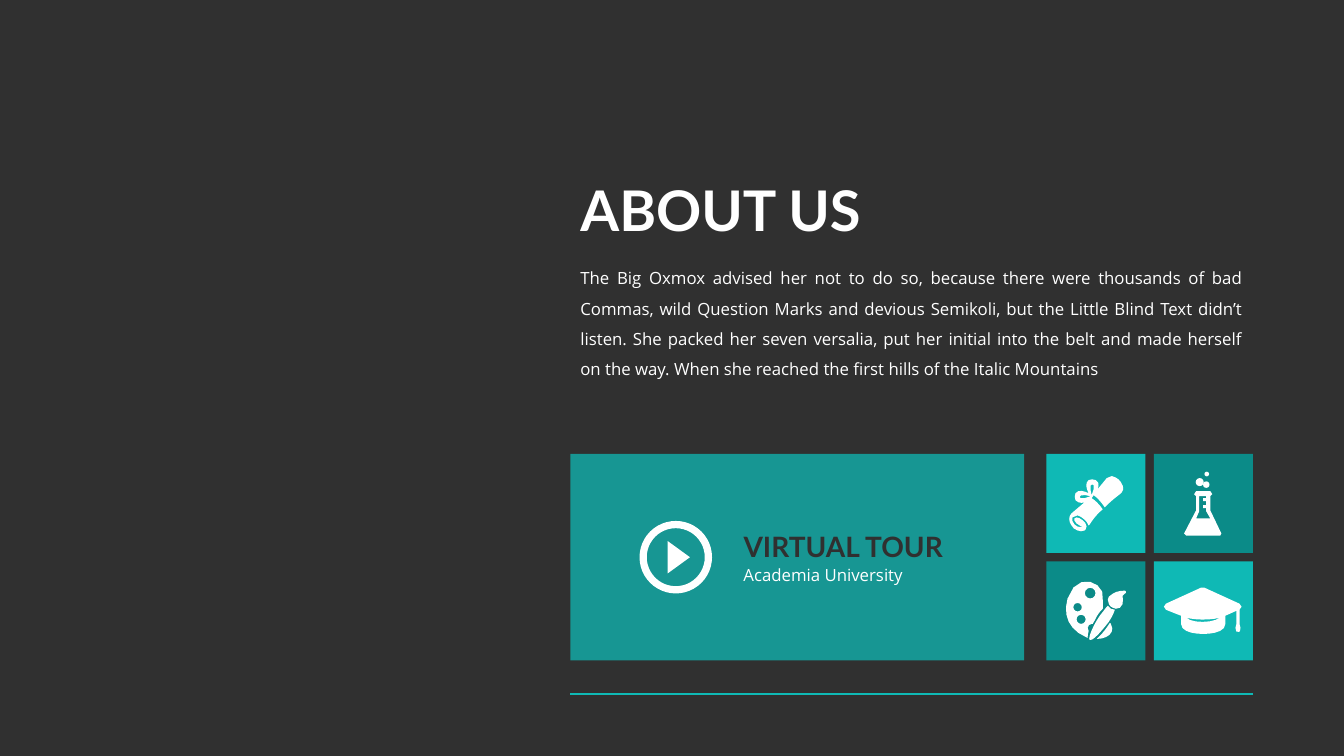
from math import cos, dist, sin, tau

from lxml.etree import SubElement
from pptx import Presentation
from pptx.dml.color import RGBColor
from pptx.enum.shapes import MSO_CONNECTOR, MSO_SHAPE
from pptx.enum.text import MSO_ANCHOR, PP_ALIGN
from pptx.oxml.ns import qn
from pptx.util import Pt

# Content
TITLE = "ABOUT US"
STORY = (
    "The Big Oxmox advised her not to do so, because there were thousands of bad "
    "Commas, wild Question Marks and devious Semikoli, but the Little Blind Text "
    "didn’t listen. She packed her seven versalia, put her initial into the belt "
    "and made herself on the way. When she reached the first hills of the Italic "
    "Mountains"
)
TOUR = "VIRTUAL TOUR"
SCHOOL = "Academia University"
COLOURS = {"dark": "303030", "teal": "0FB9B5", "deep": "0B8B88", "white": "FFFFFF"}

# Icon outlines on a unit grid: M start, L line, C curve, O circle (centre, radius)
PLAY = ["M 28 52 L 50 36 L 28 20"]
SCROLL = [
    "M 74 28 C 72 25 69 23 65 22 C 63 22 61 23 60 24 L 51 35 "
    "C 52 32 53 28 49 26 C 47 25 44 25 42 26 C 38 29 40 35 42 39 "
    "C 38 37 32 35 29 39 C 28 41 28 44 29 46 C 32 49 35 49 38 48 "
    "L 25 59 C 22 62 22 67 25 71 C 26 73 28 75 31 76 "
    "C 33 77 36 77 38 76 L 39 75 C 43 70 34 63 30 63 L 28 64 "
    "C 27 65 28 67 30 69 C 33 73 37 72 37 72 C 34 73 31 73 28 70 "
    "C 26 68 25 65 26 63 C 27 62 28 61 31 61 C 35 62 41 67 42 71 L 43 70 "
    "C 47 64 51 59 56 55 C 52 49 47 45 45 44 L 47 41 C 50 43 54 47 58 53 "
    "C 64 47 69 43 73 40 L 75 38 C 77 36 77 32 74 28 "
    "M 38 44 C 37 44 35 45 34 44 C 33 43 32 40 39 41 L 44 42 "
    "C 42 43 40 43 38 44 M 47 35 L 45 41 L 44 36 "
    "C 43 29 46 30 47 31 C 48 32 47 34 47 35"
]
FLASK = [
    "M 67 79 L 56 56 L 56 42 C 57 41 58 41 58 40 C 58 38 57 37 56 37 L 42 37 "
    "C 41 37 40 38 40 40 C 40 41 41 41 42 42 L 42 56 L 30 79 "
    "C 30 80 31 81 32 81 L 66 81 C 67 81 68 80 67 79 "
    "M 42 64 L 45 57 L 45 42 L 52 42 L 52 44 L 49 44 C 48 44 48 47 49 47 "
    "L 52 47 L 52 51 L 49 51 C 48 51 48 54 49 54 L 52 54 L 52 57 L 56 64",
    "O 52.5 20 2.3",
    "O 52 30.5 3.2",
    "O 45.5 28 4",
]
PALETTE = [
    "M 63 61 C 60 66 56 71 53 74 L 50 77 C 60 77 69 71 64 62",
    "M 41 66 C 41 64 43 62 45 62 L 46 62 C 48 59 49 56 51 53 C 53 50 54 49 56 47 "
    "C 56 45 56 42 56 38 C 60 21 30 8 21 37 C 16 54 23 68 39 75 L 41 76 "
    "C 41 74 41 72 42 69 L 41 66 "
    "O 31 45.5 4.2 O 34.5 57.5 4.5 O 43.5 31.5 5.3",
    "M 64 47 L 61 44 C 59 46 57 49 53 54 C 46 64 41 77 43 78 L 44 78 "
    "C 47 78 55 69 62 60 C 66 54 67 51 68 48 L 64 47",
    "M 79 30 L 78 29 C 73 29 69 30 66 32 C 62 34 61 36 61 38 "
    "C 61 39 61 41 62 42 C 62 44 64 45 66 46 C 67 47 68 47 69 47 "
    "C 71 47 72 47 73 46 C 76 44 76 41 76 38 C 75 35 75 33 79 31",
]
CAP = [
    "M 87 45 C 87 44 86 42 85 42 L 50 26 C 49 26 48 26 47 26 L 12 42 "
    "C 11 42 10 44 10 45 C 10 46 11 48 12 48 L 27 54 L 27 62 "
    "C 27 72 47 72 49 72 C 51 72 71 72 71 62 L 71 54 L 82 49 L 82 62 "
    "L 81 66 C 81 70 82 70 84 70 C 85 70 86 70 86 66 "
    "L 85 62 L 85 48 C 86 48 87 46 87 45 "
    "M 65 56 C 60 61 37 62 32 55.5 C 36 58 58 59 66 55.5"
]
TILES = [[(SCROLL, "teal"), (FLASK, "deep")], [(PALETTE, "deep"), (CAP, "teal")]]

# Layout in points
LEFT, RIGHT, PANEL_TOP, RULE_TOP = 407.5, 895, 324.2, 495.8
PANEL_WIDTH, TILE, PITCH = 324, 70.8, 76.8
TILE_LEFT = RIGHT - TILE - PITCH
TEXT_LEFT = 524
PLAY_LEFT, PLAY_TOP, PLAY_SIZE = 456.8, 372.1, 51.8
UNIT = 0.72
FINE = 100  # subdivisions of a grid unit

deck = Presentation()
deck.slide_width, deck.slide_height = Pt(960), Pt(540)
page = deck.slides.add_slide(deck.slide_layouts[6])


def colour(name):
    return RGBColor.from_string(COLOURS[name])


def paint(shape, name):
    shape.shadow.inherit = False
    shape.fill.solid()
    shape.fill.fore_color.rgb = colour(name)
    shape.line.fill.background()


def add_block(left, top, width, height, name, kind=MSO_SHAPE.RECTANGLE):
    block = page.shapes.add_shape(kind, Pt(left), Pt(top), Pt(width), Pt(height))
    paint(block, name)
    return block


def add_text(text, left, top, width, height, *, size, font, name="white",
             bold=False, align=PP_ALIGN.LEFT, spacing=1.0, anchor=MSO_ANCHOR.TOP):
    box = page.shapes.add_textbox(Pt(left), Pt(top), Pt(width), Pt(height))
    frame = box.text_frame
    frame.word_wrap = True
    frame.vertical_anchor = anchor
    para = frame.paragraphs[0]
    para.alignment, para.line_spacing = align, spacing
    span = para.add_run()
    span.text = text
    span.font.size, span.font.name, span.font.bold = Pt(size), font, bold
    span.font.color.rgb = colour(name)


def trace(outline):
    """Turn an outline into a list of closed contours of points."""
    contours, words = [], iter(outline.split())
    for command in words:
        count = {"M": 2, "L": 2, "O": 3, "C": 6}[command]
        values = [float(next(words)) for _ in range(count)]
        if command == "M":
            contours.append([tuple(values)])
        elif command == "L":
            contours[-1].append(tuple(values))
        elif command == "O":
            x, y, radius = values
            turns = [tau * step / 12 for step in range(12)]
            contours.append([(x + radius * cos(turn), y + radius * sin(turn))
                             for turn in turns])
        else:
            nodes = [contours[-1][-1], values[:2], values[2:4], values[4:]]
            # Longer curves get more points
            length = sum(dist(*pair) for pair in zip(nodes, nodes[1:]))
            steps = max(1, min(6, round(length / 4)))
            for step in range(1, steps + 1):
                t = step / steps
                weights = ((1 - t) ** 3, 3 * t * (1 - t) ** 2, 3 * t * t * (1 - t), t ** 3)
                contours[-1].append(tuple(
                    sum(weight * node[axis] for weight, node in zip(weights, nodes))
                    for axis in (0, 1)))
    return contours


def add_icon(outlines, left, top):
    shapes = page.shapes.add_group_shape().shapes if len(outlines) > 1 else page.shapes
    for outline in outlines:
        contours = [[(x * FINE, y * FINE) for x, y in contour]
                    for contour in trace(outline)]
        builder = shapes.build_freeform(*contours[0][0], scale=Pt(UNIT) / FINE)
        for index, contour in enumerate(contours):
            if index:
                builder.move_to(*contour[0])
            builder.add_line_segments(contour[1:], close=True)
        paint(builder.convert_to_shape(Pt(left), Pt(top)), "white")


# Background and heading
page.background.fill.solid()
page.background.fill.fore_color.rgb = colour("dark")
add_text(TITLE, LEFT, 122.4, 552, 60.5, size=40, font="Lato", bold=True,
         spacing=0.9, anchor=MSO_ANCHOR.MIDDLE)
add_text(STORY, LEFT, 180.7, RIGHT - LEFT, 92, size=12, font="Open Sans",
         align=PP_ALIGN.JUSTIFY, spacing=1.5)

# Virtual tour panel
panel = add_block(LEFT, PANEL_TOP, PANEL_WIDTH, PITCH + TILE, "teal")
tint = panel.fill._xPr.find(qn("a:solidFill"))[0]
SubElement(tint, qn("a:alpha")).set("val", "75000")
ring = add_block(PLAY_LEFT, PLAY_TOP, PLAY_SIZE, PLAY_SIZE, "white", MSO_SHAPE.DONUT)
ring.adjustments[0] = 0.1
add_icon(PLAY, PLAY_LEFT, PLAY_TOP)
add_text(TOUR, TEXT_LEFT, 374.4, 170, 31.5, size=20, font="Lato", name="dark", bold=True)
add_text(SCHOOL, TEXT_LEFT, 399.6, 150, 21.8, size=12, font="Open Sans")

# Icon tiles
for row, tiles in enumerate(TILES):
    for column, (icon, name) in enumerate(tiles):
        left, top = TILE_LEFT + column * PITCH, PANEL_TOP + row * PITCH
        add_block(left, top, TILE, TILE, name)
        add_icon(icon, left, top)

# Closing rule
rule = page.shapes.add_connector(
    MSO_CONNECTOR.STRAIGHT, Pt(LEFT), Pt(RULE_TOP), Pt(RIGHT), Pt(RULE_TOP))
rule.line.color.rgb = colour("teal")
rule.line.width = Pt(1.5)
SubElement(rule._element.spPr, qn("a:effectLst"))

deck.save("out.pptx")
